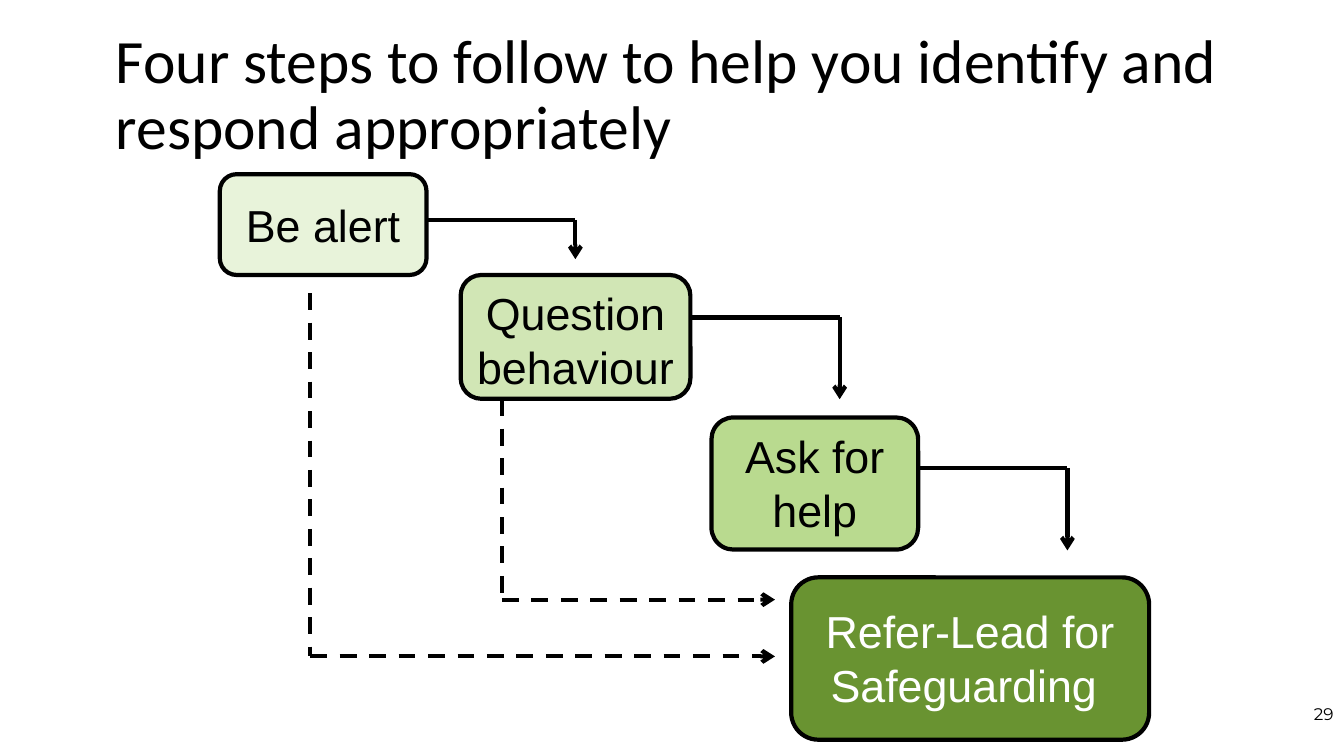
from typing import NamedTuple

from lxml import etree
from pptx import Presentation
from pptx import util as u
from pptx.dml.color import RGBColor
from pptx.enum import dml, shapes, text
from pptx.oxml import ns

BLACK = RGBColor(0x00, 0x00, 0x00)
WHITE = RGBColor(0xFF, 0xFF, 0xFF)
PALE = RGBColor(0xE8, 0xF3, 0xDA)
LIGHT = RGBColor(0xD1, 0xE6, 0xB5)
MID = RGBColor(0xB9, 0xDA, 0x8F)
DARK = RGBColor(0x69, 0x93, 0x31)
STROKE = u.Pt(3)


class Area(NamedTuple):
    left: float
    top: float
    width: float
    height: float

    def sizes(self) -> list[u.Cm]:
        return [u.Cm(side) for side in self]


class Step(NamedTuple):
    label: str
    area: Area
    fill: RGBColor
    ink: RGBColor = BLACK
    inset: float = 0.13


class Point(NamedTuple):
    x: float
    y: float


class Route(NamedTuple):
    start: Point
    turn: Point
    end: Point
    dashed: bool = False


STEPS = [
    Step("Be alert", Area(5.54, 4.39, 5.21, 2.54), PALE, inset=0.46),
    Step("Question behaviour", Area(11.61, 6.93, 5.79, 3.12), LIGHT),
    Step("Ask for help", Area(17.93, 10.52, 5.21, 3.33), MID),
    Step("Refer-Lead for Safeguarding ", Area(19.94, 14.55, 9.02, 4.09),
         DARK, WHITE, 0.46),
]

ROUTES = [
    Route(Point(10.74, 5.54), Point(14.5, 5.54), Point(14.5, 6.53)),
    Route(Point(17.4, 8), Point(21.16, 8), Point(21.16, 10.06)),
    Route(Point(23.14, 11.79), Point(26.9, 11.79), Point(26.9, 13.87)),
    Route(Point(7.82, 7.39), Point(7.82, 16.54), Point(19.53, 16.54), True),
    Route(Point(12.65, 10.06), Point(12.65, 15.11), Point(19.53, 15.11), True),
]


def write(frame, words: str, font: str, size: int, ink: RGBColor, align):
    frame.word_wrap = True
    para = frame.paragraphs[0]
    para.alignment = align
    run = para.add_run()
    run.text = words
    run.font.name = font
    run.font.size = u.Pt(size)
    run.font.color.rgb = ink
    return para


def add_label(slide, area: Area, words: str, font: str, size: int, align):
    """Add a text box whose text is centred from top to bottom."""
    frame = slide.shapes.add_textbox(*area.sizes()).text_frame
    frame.vertical_anchor = text.MSO_ANCHOR.MIDDLE
    return write(frame, words, font, size, BLACK, align)


def add_step(slide, step: Step) -> None:
    box = slide.shapes.add_shape(
        shapes.MSO_SHAPE.ROUNDED_RECTANGLE, *step.area.sizes())
    box.shadow.inherit = False
    box.fill.solid()
    box.fill.fore_color.rgb = step.fill
    box.line.color.rgb = BLACK
    box.line.width = STROKE
    frame = box.text_frame
    frame.vertical_anchor = text.MSO_ANCHOR.TOP
    frame.margin_left = frame.margin_right = u.Cm(0.15)
    frame.margin_top = u.Cm(step.inset)
    write(frame, step.label, "Arial", 32, step.ink, text.PP_ALIGN.CENTER)


def add_line(slide, start: Point, end: Point, dashed: bool, arrow: bool) -> None:
    ends = [u.Cm(value) for value in (*start, *end)]
    link = slide.shapes.add_connector(shapes.MSO_CONNECTOR.STRAIGHT, *ends)
    link.line.color.rgb = BLACK
    link.line.width = STROKE
    if dashed:
        link.line.dash_style = dml.MSO_LINE.DASH
    if arrow:
        stroke = link.line._get_or_add_ln()
        etree.SubElement(stroke, ns.qn("a:tailEnd"), type="arrow")
    etree.SubElement(link._element.spPr, ns.qn("a:effectLst"))


def add_route(slide, route: Route) -> None:
    add_line(slide, route.start, route.turn, route.dashed, False)
    add_line(slide, route.turn, route.end, route.dashed, True)


def main() -> None:
    deck = Presentation()
    deck.slide_width, deck.slide_height = u.Cm(33.87), u.Cm(19.05)
    slide = deck.slides.add_slide(deck.slide_layouts[6])
    title = add_label(
        slide, Area(2.67, 0.53, 29.46, 3.81),
        "Four steps to follow to help you identify and respond appropriately",
        "Calibri", 44, text.PP_ALIGN.LEFT)
    title.line_spacing = 0.9
    add_label(slide, Area(25.96, 17.35, 7.9, 1.27), "29",
              "Montserrat", 12, text.PP_ALIGN.RIGHT)
    for step in STEPS:
        add_step(slide, step)
    for route in ROUTES:
        add_route(slide, route)
    deck.save("out.pptx")


if __name__ == "__main__":
    main()
